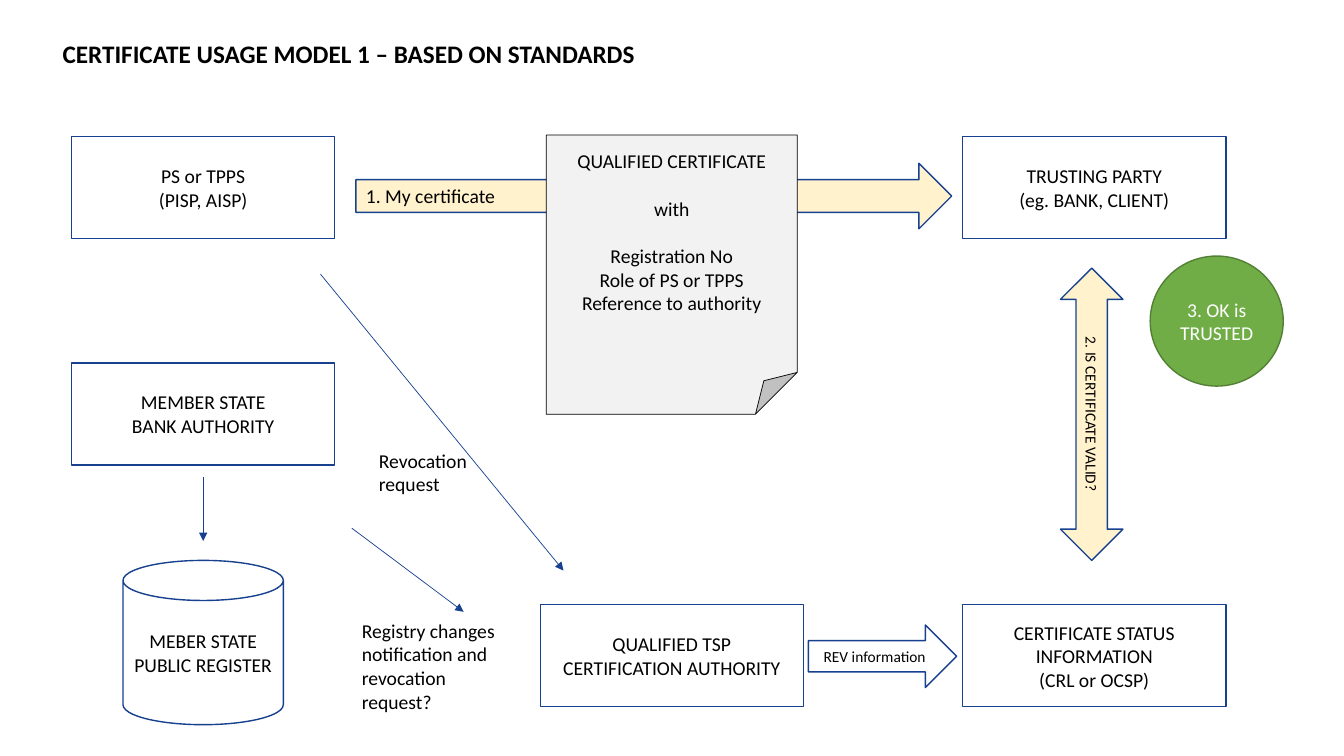
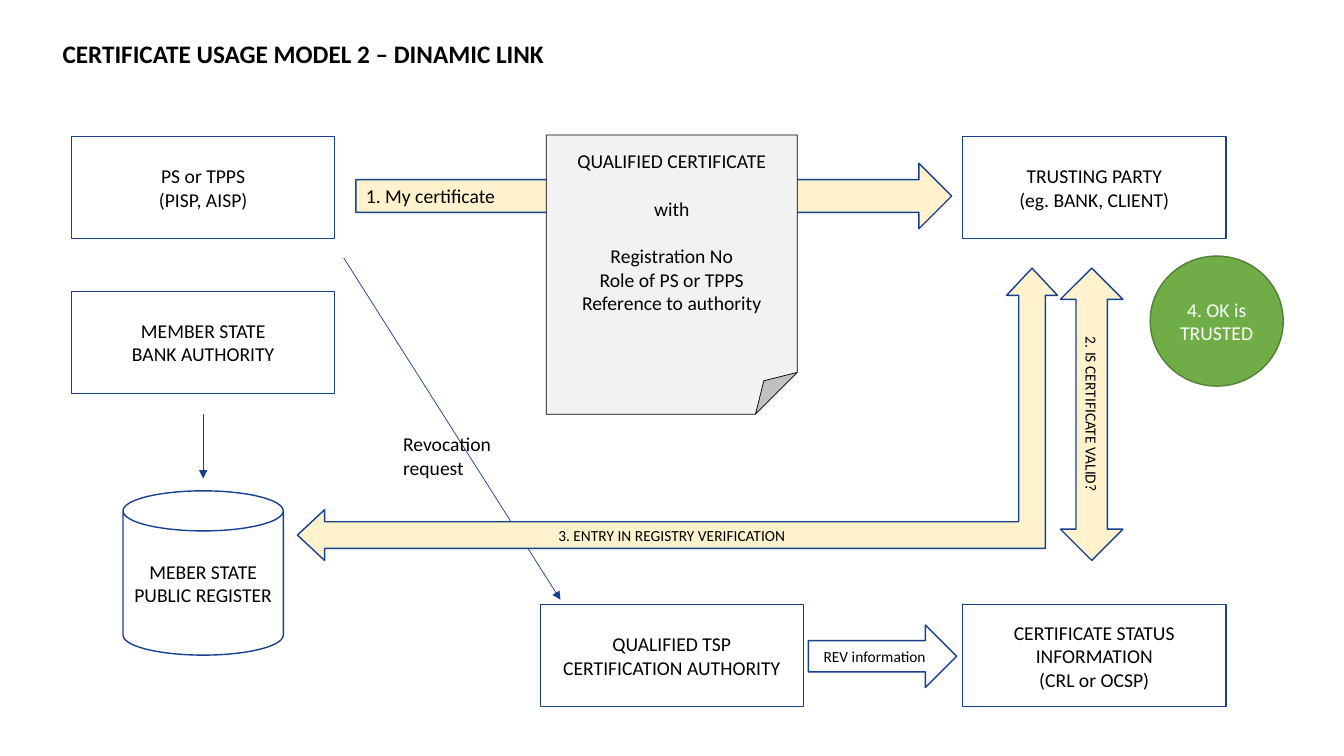
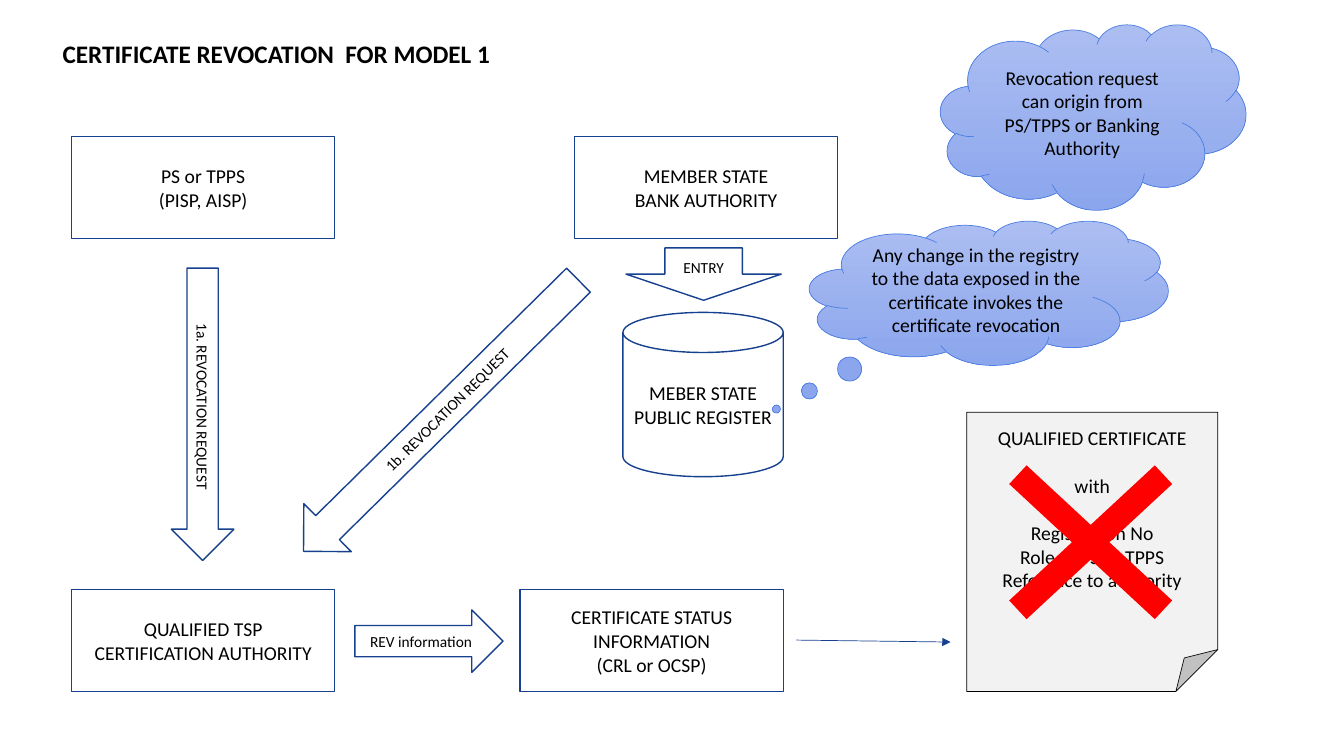
from dataclasses import dataclass

from lxml.etree import SubElement
from pptx import Presentation
from pptx.dml.color import RGBColor
from pptx.enum.shapes import MSO_CONNECTOR, MSO_SHAPE as Preset
from pptx.enum.text import MSO_ANCHOR as Anchor, PP_ALIGN as Align
from pptx.oxml.ns import qn
from pptx.util import Inches, Pt

BLACK = RGBColor(0x00, 0x00, 0x00)
WHITE = RGBColor(0xFF, 0xFF, 0xFF)
BLUE = RGBColor(0x17, 0x40, 0x8F)
CREAM = RGBColor(0xFF, 0xF2, 0xCC)
PAPER = RGBColor(0xF2, 0xF2, 0xF2)
GREEN = RGBColor(0x70, 0xAD, 0x47)
DARK_GREEN = RGBColor(0x53, 0x80, 0x35)
RED = RGBColor(0xFF, 0x00, 0x00)
CLOUD_TOP = RGBColor(0xAC, 0xBE, 0xF1)
CLOUD_BOTTOM = RGBColor(0x8C, 0xA6, 0xEE)
CLOUD_EDGE = RGBColor(0x4C, 0x7E, 0xE2)

FONT = "Calibri"
BODY, SMALL, TITLE = 14, 11, 18

# The grid has 100 columns and 100 rows over the whole slide.
SLIDE_W, SLIDE_H = Inches(13.333), Inches(7.5)
LEFT, MIDDLE, RIGHT = 5.33, 40.2, 71.63
TOP_ROW, BOTTOM_ROW = 18.05, 80
PARTY_W, PARTY_H = 19.58, 13.5
REGISTER_W, REGISTER_H = 11.93, 21.73
CERTIFICATE_W, CERTIFICATE_H = 18.68, 36.93
LONG_ARROW = (21.75, 8.27)
REV_ARROW = (11.03, 8.27)

SERVICE_PROVIDER = ["PS or TPPS", "(PISP, AISP)"]
BANK_AUTHORITY = ["MEMBER STATE", "BANK AUTHORITY"]
TRUSTING_PARTY = ["TRUSTING PARTY", "(eg. BANK, CLIENT)"]
TRUST_SERVICE = ["QUALIFIED TSP", "CERTIFICATION AUTHORITY"]
STATUS_SERVICE = ["CERTIFICATE STATUS INFORMATION", "(CRL or OCSP)"]


@dataclass
class Box:
    """A rectangle in grid columns and rows."""
    x: float
    y: float
    w: float
    h: float

    def emu(self):
        return (column(self.x), row(self.y), column(self.w), row(self.h))


def column(value):
    return int(SLIDE_W * value / 100)


def row(value):
    return int(SLIDE_H * value / 100)


def write(frame, lines, size=BODY, color=BLACK, bold=False, align=Align.CENTER,
          anchor=Anchor.MIDDLE, spacing=None, gaps=()):
    """Fill a text frame; gaps lists the lines that have a line of space above."""
    frame.word_wrap = True
    frame.vertical_anchor = anchor
    for index, line in enumerate(lines):
        paragraph = frame.paragraphs[0] if index == 0 else frame.add_paragraph()
        paragraph.alignment = align
        if spacing:
            paragraph.line_spacing = spacing
        if index in gaps:
            paragraph.space_before = Pt(size * 1.22)
        run = paragraph.add_run()
        run.text = line
        run.font.name, run.font.size = FONT, Pt(size)
        run.font.bold, run.font.color.rgb = bold, color


def add_figure(slide, preset, box, lines=(), fill=WHITE, edge=BLUE, edge_width=1,
               rotation=0, adjust=(), **text_format):
    figure = slide.shapes.add_shape(preset, *box.emu())
    figure.shadow.inherit = False
    figure.rotation = rotation
    for index, value in enumerate(adjust):
        figure.adjustments[index] = value
    figure.fill.solid()
    figure.fill.fore_color.rgb = fill
    if edge is None:
        figure.line.fill.background()
    else:
        figure.line.color.rgb = edge
        figure.line.width = Pt(edge_width)
    if lines:
        write(figure.text_frame, lines, **text_format)
    return figure


def add_arrow_line(slide, x1, y1, x2, y2):
    arrow = slide.shapes.add_connector(
        MSO_CONNECTOR.STRAIGHT, column(x1), row(y1), column(x2), row(y2))
    arrow.line.color.rgb = BLUE
    arrow.line.width = Pt(0.5)
    properties = arrow.element.spPr
    SubElement(properties.find(qn("a:ln")), qn("a:tailEnd"), type="triangle")
    SubElement(properties, qn("a:effectLst"))


def add_label(slide, box, text):
    label = slide.shapes.add_textbox(*box.emu())
    write(label.text_frame, [text], align=Align.LEFT, anchor=Anchor.TOP)


def add_titled_slide(deck, text):
    slide = deck.slides.add_slide(deck.slide_layouts[5])
    title = slide.shapes.title
    title.left, title.top, title.width, title.height = Box(3.15, 3.2, 93.75, 8.27).emu()
    frame = title.text_frame
    frame.margin_left, frame.margin_right = Inches(0.2), Inches(0.1)
    frame.margin_top = frame.margin_bottom = Inches(0.05)
    write(frame, [text], size=TITLE, bold=True, align=Align.LEFT, spacing=0.9)
    return slide


def party(slide, x, y, lines):
    add_figure(slide, Preset.RECTANGLE, Box(x, y, PARTY_W, PARTY_H), lines)


def register(slide, x, y):
    add_figure(slide, Preset.CAN, Box(x, y, REGISTER_W, REGISTER_H),
               ["MEBER STATE", "PUBLIC REGISTER"])


def certificate(slide, x, y, revoked=False):
    sheet = add_figure(
        slide, Preset.FOLDED_CORNER, Box(x, y, CERTIFICATE_W, CERTIFICATE_H),
        ["QUALIFIED CERTIFICATE", "with", "Registration No",
         "Role of PS or TPPS", "Reference to authority"],
        fill=PAPER, edge=BLACK, edge_width=0.5, anchor=Anchor.TOP, gaps=(1, 2))
    sheet.text_frame.margin_top = Inches(0.14)
    if revoked:
        add_figure(slide, Preset.MATH_MULTIPLY, Box(x - 1.2, y, 20.85, 34.4),
                   fill=RED, edge=None, adjust=[0.098])


def cloud(slide, preset, box, text, **options):
    bubble = add_figure(slide, preset, box, [text], edge=CLOUD_EDGE,
                        edge_width=0.5, **options)
    bubble.fill.gradient()
    bubble.fill.gradient_angle = 270
    for stop, color in zip(bubble.fill.gradient_stops, (CLOUD_TOP, CLOUD_BOTTOM)):
        stop.color.rgb = color


def rev_information(slide, x, y):
    add_figure(slide, Preset.RIGHT_ARROW, Box(x, y, *REV_ARROW),
               ["REV information"], size=SMALL)


def revocation_request(slide, line, label_x, label_y):
    add_arrow_line(slide, *line)
    add_label(slide, Box(label_x, label_y, 12.6, 7.6), "Revocation request")


def certificate_handover(slide):
    """Top row: the provider shows its certificate to the trusting party."""
    add_figure(slide, Preset.RIGHT_ARROW, Box(26.48, 21.6, 44.33, 8.67),
               ["1. My certificate"], fill=CREAM, align=Align.LEFT)
    party(slide, LEFT, TOP_ROW, SERVICE_PROVIDER)
    certificate(slide, 40.65, 17.87)
    party(slide, RIGHT, TOP_ROW, TRUSTING_PARTY)


def authority_register(slide, top, entry_top, register_top):
    """Left column: the authority enters data in the register below it."""
    center = LEFT + PARTY_W / 2
    party(slide, LEFT, top, BANK_AUTHORITY)
    add_arrow_line(slide, center, entry_top, center, entry_top + 8.5)
    register(slide, center - REGISTER_W / 2, register_top)


def status_check(slide, verdict):
    """Right side: the status service answers the trusting party."""
    party(slide, MIDDLE, BOTTOM_ROW, TRUST_SERVICE)
    party(slide, RIGHT, BOTTOM_ROW, STATUS_SERVICE)
    add_figure(slide, Preset.LEFT_RIGHT_ARROW, Box(70.35, 50.67, *LONG_ARROW),
               ["2. IS CERTIFICATE VALID?"], fill=CREAM, rotation=90, size=SMALL)
    add_figure(slide, Preset.OVAL, Box(85.58, 33.87, 9.9, 17.2), [verdict],
               fill=GREEN, edge=DARK_GREEN, color=WHITE)
    rev_information(slide, 60.15, 82.67)


def standards_model(deck):
    slide = add_titled_slide(deck, "CERTIFICATE USAGE MODEL 1 – BASED ON STANDARDS")
    certificate_handover(slide)
    authority_register(slide, 48, 63.07, 74.13)
    status_check(slide, "3. OK is TRUSTED")
    add_arrow_line(slide, 26.18, 69.87, 34.5, 80.93)
    add_label(slide, Box(26.18, 81.2, 12.6, 13.87),
              "Registry changes notification and revocation request?")
    revocation_request(slide, (23.85, 36.27, 41.93, 75.47), 27.45, 58.67)


def dynamic_link_model(deck):
    slide = add_titled_slide(deck, "CERTIFICATE USAGE MODEL 2 – DINAMIC LINK")
    revocation_request(slide, (25.58, 34.13, 41.7, 79.33), 29.25, 56.53)
    certificate_handover(slide)
    authority_register(slide, 38.53, 54.8, 64.93)
    status_check(slide, "4. OK is TRUSTED")
    add_figure(slide, Preset.LEFT_UP_ARROW, Box(22.13, 35.47, 56.55, 38.67),
               ["3. ENTRY IN REGISTRY VERIFICATION"], fill=CREAM,
               adjust=[0.091, 0.087, 0.093], size=SMALL)


def revocation(deck):
    slide = add_titled_slide(deck, "CERTIFICATE REVOCATION  FOR MODEL 1")
    bottom = 78
    party(slide, LEFT, TOP_ROW, SERVICE_PROVIDER)
    party(slide, 42.75, TOP_ROW, BANK_AUTHORITY)
    register(slide, 46.35, 41.33)
    add_figure(slide, Preset.DOWN_ARROW, Box(46.58, 32.8, 11.55, 6.93),
               ["ENTRY"], size=SMALL)
    party(slide, LEFT, bottom, TRUST_SERVICE)
    add_figure(slide, Preset.RIGHT_ARROW, Box(4.2, 50.67, *LONG_ARROW),
               ["1a. REVOCATION REQUEST"], rotation=90, size=SMALL)
    cloud(slide, Preset.CLOUD, Box(69.98, 3.2, 22.73, 24.53),
          "Revocation request can origin from PS/TPPS or Banking Authority")
    add_figure(slide, Preset.LEFT_ARROW, Box(18.45, 50.53, 28.73, 8.93),
               ["1b. REVOCATION REQUEST"], rotation=315.4, size=SMALL)
    party(slide, 38.7, bottom, STATUS_SERVICE)
    rev_information(slide, 26.4, 80.67)
    cloud(slide, Preset.CLOUD_CALLOUT, Box(60.23, 29.2, 26.7, 19.07),
          "Any change in the registry to the data exposed in the certificate "
          "invokes the certificate revocation", adjust=[-0.592, 0.806])
    add_arrow_line(slide, 59.25, 84.67, 70.73, 84.93)
    certificate(slide, 71.93, 54.53, revoked=True)


def main():
    deck = Presentation()
    deck.slide_width, deck.slide_height = SLIDE_W, SLIDE_H
    standards_model(deck)
    dynamic_link_model(deck)
    revocation(deck)
    deck.save("out.pptx")


if __name__ == "__main__":
    main()
